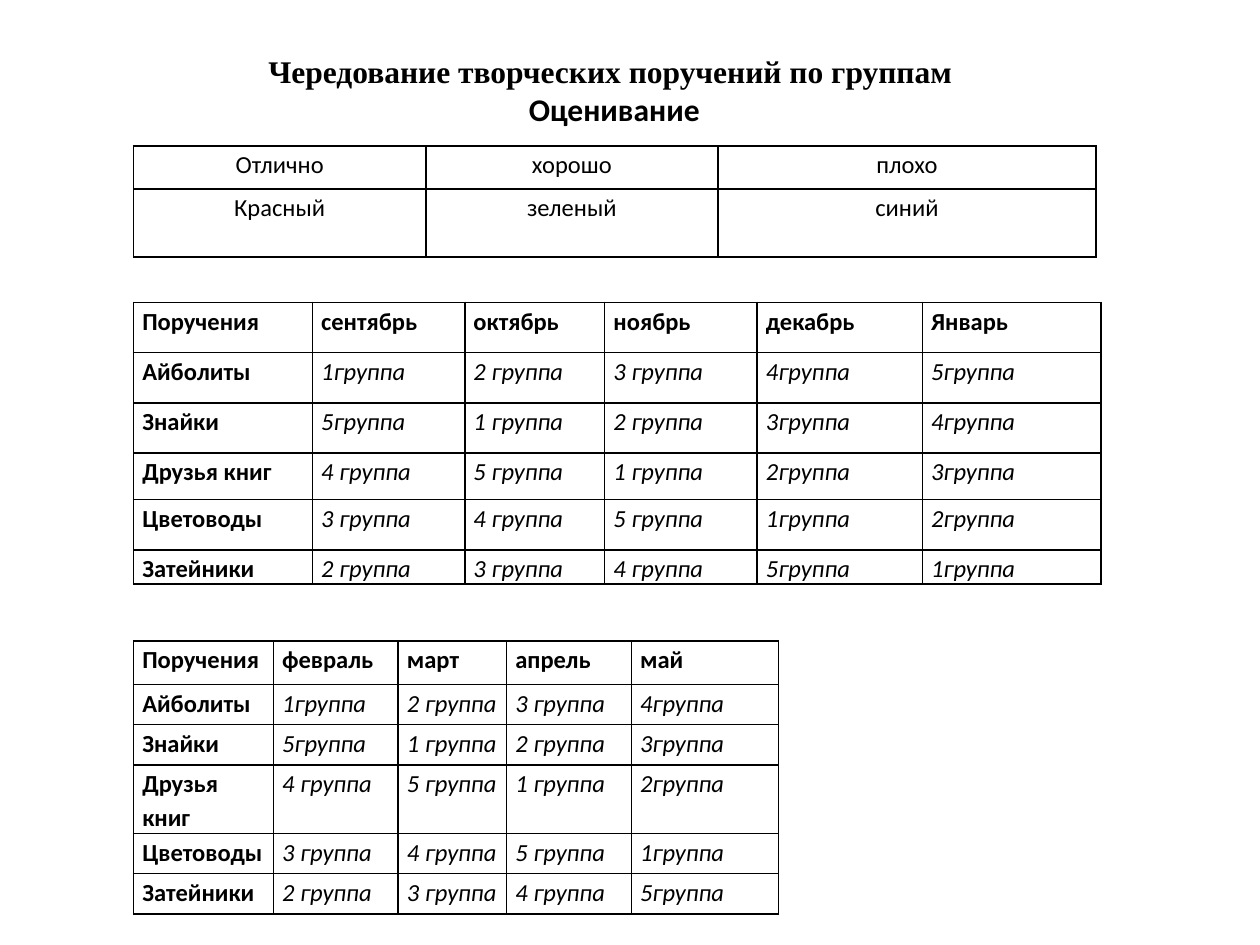
from dataclasses import dataclass

from lxml import etree
from pptx import Presentation
from pptx.dml.color import RGBColor
from pptx.enum import text
from pptx.oxml import ns
from pptx.util import Pt


@dataclass(frozen=True)
class Theme:
    ink: str = "000000"
    body: str = "Calibri"
    serif: str = "Times New Roman"
    head: float = 18
    cell: float = 14
    lead: float = 1.15
    pad: float = 5
    rule: float = 1


@dataclass(frozen=True)
class Grid:
    left: float
    top: float
    cols: list[float]
    rows: list[float]
    cells: list[list[str]]
    duty: bool = True  # bold headings and italic groups


THEME = Theme()
MID = text.PP_ALIGN.CENTER
LEFT = 76.3
TASKS = ["Айболиты", "Знайки", "Друзья книг", "Цветоводы", "Затейники"]


def write(para, words: str, *, font: str = THEME.body, size: float = THEME.cell,
          bold: bool = False, italic: bool = False, align=None, lead=None) -> None:
    para.alignment = align
    para.line_spacing = lead
    run = para.add_run()
    run.text = words
    face = run.font
    face.name, face.size = font, Pt(size)
    face.bold, face.italic = bold, italic
    face.color.rgb = RGBColor.from_string(THEME.ink)


def frame(cell) -> None:
    """Give a cell four thin borders and no fill."""
    props = cell._tc.get_or_add_tcPr()
    for side in ("a:lnL", "a:lnR", "a:lnT", "a:lnB"):
        line = etree.SubElement(props, ns.qn(side), w=str(Pt(THEME.rule)))
        fill = etree.SubElement(line, ns.qn("a:solidFill"))
        etree.SubElement(fill, ns.qn("a:srgbClr"), val=THEME.ink)
    cell.fill.background()


def draw(slide, grid: Grid) -> None:
    table = slide.shapes.add_table(
        len(grid.rows), len(grid.cols), Pt(grid.left), Pt(grid.top),
        Pt(sum(grid.cols)), Pt(sum(grid.rows))).table
    table.first_row = table.horz_banding = False
    for col, width in zip(table.columns, grid.cols):
        col.width = Pt(width)
    for row, height in zip(table.rows, grid.rows):
        row.height = Pt(height)
    for r, line in enumerate(grid.cells):
        for c, words in enumerate(line):
            cell = table.cell(r, c)
            cell.margin_left = cell.margin_right = Pt(THEME.pad)
            cell.margin_top = cell.margin_bottom = Pt(0)
            label = r == 0 or c == 0
            write(cell.text_frame.paragraphs[0], words, lead=THEME.lead,
                  bold=grid.duty and label, italic=grid.duty and not label,
                  align=None if grid.duty else MID)
            frame(cell)


def group(row: int, month: int) -> str:
    """Each task passes to the next group every month."""
    gap = " " if month in (1, 2) or (month == 0 and row > 1) else ""
    return f"{(month - row) % 5 + 1}{gap}группа"


def rota(months: list[str]) -> list[list[str]]:
    body = [[task] + [group(r, m) for m in range(len(months))]
            for r, task in enumerate(TASKS)]
    return [["Поручения"] + months] + body


def main() -> None:
    deck = Presentation()
    deck.slide_width, deck.slide_height = Pt(720), Pt(540)
    slide = deck.slides.add_slide(deck.slide_layouts[6])

    # Duty rotas for the two halves of the year
    draw(slide, Grid(LEFT, 172.8, [102.2, 87.1, 80, 87.1, 94.4, 102.2],
                     [28.7, 28.7, 28.7, 26.7, 28.7, 19.6],
                     rota(["сентябрь", "октябрь", "ноябрь", "декабрь", "Январь"])))
    draw(slide, Grid(LEFT, 366.4, [79.9, 71.3, 62, 71.3, 84.2],
                     [24.7, 23, 23, 38.5, 23, 23],
                     rota(["февраль", "март", "апрель", "май"])))

    # Marks and their colours
    draw(slide, Grid(LEFT, 83.4, [167, 167, 216], [24.5, 39],
                     [["Отлично", "хорошо", "плохо"],
                      ["Красный", "зеленый", "синий"]], duty=False))

    # Title
    box = slide.shapes.add_textbox(Pt(16.5), Pt(26), Pt(669), Pt(51)).text_frame
    box.word_wrap = True
    box.vertical_anchor = text.MSO_ANCHOR.MIDDLE
    write(box.paragraphs[0], "Чередование творческих поручений по группам ",
          font=THEME.serif, size=THEME.head, bold=True, align=MID)
    write(box.add_paragraph(), "Оценивание", size=THEME.head, bold=True, align=MID)

    deck.save("out.pptx")


if __name__ == "__main__":
    main()
